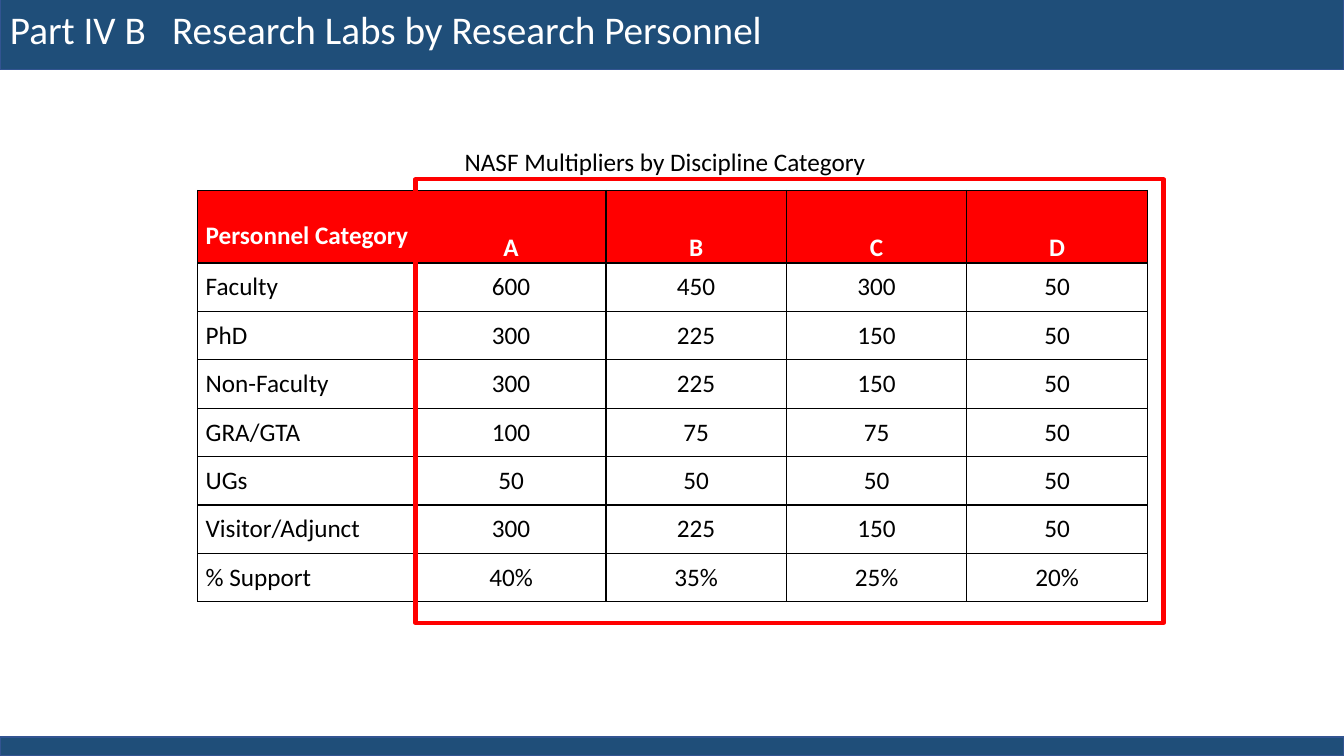
from lxml import etree
from pptx import Presentation
from pptx import util as u
from pptx.dml.color import RGBColor
from pptx.enum import shapes, text
from pptx.oxml.ns import qn

COLORS = {"navy": "1F4E79", "edge": "325491", "red": "FF0000",
          "white": "FFFFFF", "black": "000000"}
MULTIPLIERS = [
    ["Personnel Category", "A", "B", "C", "D"],
    ["Faculty", "600", "450", "300", "50"],
    ["PhD", "300", "225", "150", "50"],
    ["Non-Faculty", "300", "225", "150", "50"],
    ["GRA/GTA", "100", "75", "75", "50"],
    ["UGs", "50", "50", "50", "50"],
    ["Visitor/Adjunct", "300", "225", "150", "50"],
    ["% Support", "40%", "35%", "25%", "20%"],
]


def color(name):
    return RGBColor.from_string(COLORS[name])


def apply(target, values):
    for name, value in values.items():
        setattr(target, name, value)


class SlideBuilder:
    font = "Calibri"

    def __init__(self, slide):
        self.slide = slide

    def rect(self, box, line, width, fill=None):
        rect = self.slide.shapes.add_shape(
            shapes.MSO_SHAPE.RECTANGLE, *map(u.Inches, box))
        rect.shadow.inherit = False
        self.paint(rect, fill)
        rect.line.color.rgb = color(line)
        rect.line.width = u.Pt(width)

    def paint(self, target, name):
        if name:
            target.fill.solid()
            target.fill.fore_color.rgb = color(name)
        else:
            target.fill.background()

    def put_text(self, frame, words, size, ink, bold=False, align=text.PP_ALIGN.LEFT):
        paragraph = frame.paragraphs[0]
        paragraph.alignment = align
        run = paragraph.add_run()
        run.text = words
        apply(run.font, {"name": self.font, "size": u.Pt(size), "bold": bold})
        run.font.color.rgb = color(ink)
        return paragraph

    def label(self, box, words, size, ink, tab=None):
        frame = self.slide.shapes.add_textbox(*map(u.Inches, box)).text_frame
        frame.word_wrap = True
        paragraph = self.put_text(frame, words, size, ink)
        if tab:
            stops = etree.SubElement(paragraph._p.get_or_add_pPr(), qn("a:tabLst"))
            etree.SubElement(stops, qn("a:tab"), pos=str(u.Inches(tab)), algn="l")

    def borders(self, cell):
        properties = cell._tc.get_or_add_tcPr()
        for position, side in enumerate(("a:lnL", "a:lnR", "a:lnT", "a:lnB")):
            line = etree.Element(qn(side), w=str(u.Pt(1)))
            solid = etree.SubElement(line, qn("a:solidFill"))
            etree.SubElement(solid, qn("a:srgbClr"), val=COLORS["black"])
            properties.insert(position, line)

    def table(self, box, rows, widths, heights):
        table = self.slide.shapes.add_table(
            len(rows), len(widths), *map(u.Inches, box)).table
        apply(table, {"first_row": False, "horz_banding": False})
        for column, width in zip(table.columns, widths):
            column.width = u.Inches(width)
        for row, height in zip(table.rows, heights):
            row.height = u.Inches(height)
        for r, row in enumerate(rows):
            for c, words in enumerate(row):
                self.cell(table.cell(r, c), words, r == 0, c == 0)
        return table

    def cell(self, cell, words, header, first):
        anchors = text.MSO_ANCHOR
        apply(cell, {
            "margin_left": u.Inches(0.08), "margin_right": u.Inches(0.08),
            "margin_top": 0, "margin_bottom": 0,
            "vertical_anchor": anchors.BOTTOM if header else anchors.MIDDLE,
        })
        self.paint(cell, "red" if header else None)
        self.borders(cell)
        self.put_text(cell.text_frame, words, 18, "white" if header else "black", header,
                      text.PP_ALIGN.LEFT if first else text.PP_ALIGN.CENTER)


def main():
    deck = Presentation()
    apply(deck, {"slide_width": u.Inches(13.33), "slide_height": u.Inches(7.5)})
    builder = SlideBuilder(deck.slides.add_slide(deck.slide_layouts[6]))

    # Top and bottom bands
    for top, height in ((-0.03, 0.72), (7.31, 0.19)):
        builder.rect((0, top, 13.33, height), "edge", 1, "navy")

    # Multiplier table, with the category heading one line down
    multipliers = builder.table((1.96, 1.89, 9.42, 4.08), MULTIPLIERS,
                                [2.17, 1.88] + [1.79] * 3, [0.72] + [0.48] * 7)
    apply(multipliers.cell(0, 0), {"vertical_anchor": text.MSO_ANCHOR.TOP,
                                   "margin_top": u.Inches(0.3)})

    # Title and table caption
    builder.label((0, 0, 7.84, 0.57), "Part IV B\tResearch Labs by Research Personnel",
                  28, "white", tab=1.61)
    builder.label((4.51, 1.4, 4.28, 0.4), "NASF Multipliers by Discipline Category",
                  18, "black")

    # Frame around the discipline columns
    builder.rect((4.12, 1.78, 7.42, 4.4), "red", 3)

    deck.save("out.pptx")


if __name__ == "__main__":
    main()
